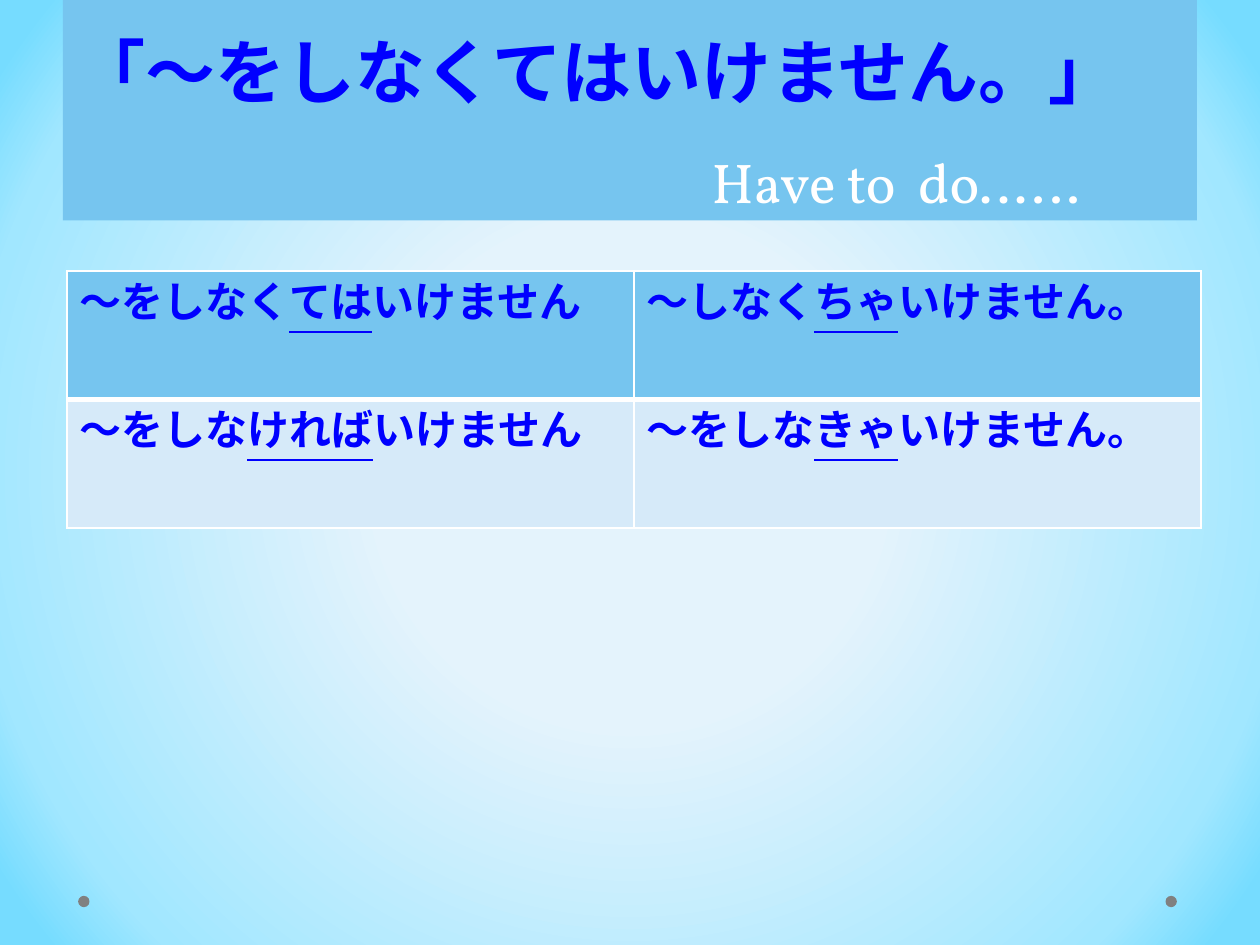
"""Build the slide on Japanese expressions of obligation."""
from lxml import etree
from pptx import Presentation
from pptx.dml.color import RGBColor
from pptx.enum import lang, shapes, text
from pptx.oxml import ns, parse_xml
from pptx.util import Inches, Pt

BLUE, SKY, PALE, WHITE, GREY = "0000FF", "76C5EF", "D6EAF9", "FFFFFF", "808080"


def paint(fill, color):
    fill.solid()
    fill.fore_color.rgb = RGBColor.from_string(color)


def style(run, size, color, bold):
    run.font.name = "Vollkorn"
    run.font.size = Pt(size)
    run.font.bold = bold
    paint(run.font.fill, color)
    run.font.language_id = lang.MSO_LANGUAGE_ID.JAPANESE
    etree.SubElement(run._r.get_or_add_rPr(), ns.qn("a:ea"), typeface="Vollkorn")


prs = Presentation()
prs.slide_width, prs.slide_height = Inches(10), Inches(7.5)
slide = prs.slides.add_slide(prs.slide_layouts[6])

stops = "".join(
    f'<a:gs pos="{percent * 1000}"><a:srgbClr val="{color}"/></a:gs>'
    for percent, color in [(32, "E4F3FC"), (84, "A1E7FF"), (95, "76DCFF")]
)
backdrop = parse_xml(
    f'<p:bg {ns.nsdecls("p", "a")}><p:bgPr><a:gradFill rotWithShape="1"><a:gsLst>{stops}</a:gsLst>'
    '<a:path path="circle"><a:fillToRect l="50000" t="50000" r="50000" b="50000"/></a:path>'
    "</a:gradFill><a:effectLst/></p:bgPr></p:bg>"
)
slide._element.cSld.insert(0, backdrop)

for left in (9.25, 0.62):
    dot = slide.shapes.add_shape(
        shapes.MSO_SHAPE.OVAL, Inches(left), Inches(7.11), Inches(0.09), Inches(0.09))
    dot.shadow.inherit = False
    paint(dot.fill, GREY)
    dot.line.fill.background()

banner = slide.shapes.add_shape(
    shapes.MSO_SHAPE.RECTANGLE, Inches(0.5), 0, Inches(9), Inches(1.75))
banner.shadow.inherit = False
paint(banner.fill, SKY)
banner.line.fill.background()
heading = banner.text_frame
heading.word_wrap = True
heading.vertical_anchor = text.MSO_ANCHOR.BOTTOM
heading.text = "「〜をしなくてはいけません。」\nHave to  do……"
looks = [(40, BLUE, True, 0), (32, WHITE, False, 5.05)]
for paragraph, (size, color, bold, indent) in zip(heading.paragraphs, looks):
    paragraph.alignment = text.PP_ALIGN.LEFT
    paragraph.line_spacing = Pt(58)
    paragraph._p.get_or_add_pPr().set("marL", str(Inches(indent)))
    style(paragraph.runs[0], size, color, bold)

phrases = [
    [("〜をしなく", "ては", "いけません"), ("〜しなく", "ちゃ", "いけません。")],
    [("〜をしな", "ければ", "いけません"), ("〜をしな", "きゃ", "いけません。")],
]
row_fills = [SKY, PALE]
row_borders = [
    {"lnL": 1, "lnR": 1, "lnT": 1, "lnB": 3},
    {"lnL": 1, "lnR": 1, "lnT": 3, "lnB": 1},
]
forms = slide.shapes.add_table(
    2, 2, Inches(0.53), Inches(2.15), Inches(9), Inches(2.04)).table
for r, row in enumerate(phrases):
    for c, parts in enumerate(row):
        cell = forms.cell(r, c)
        paragraph = cell.text_frame.paragraphs[0]
        for i, part in enumerate(parts):
            run = paragraph.add_run()
            run.text = part
            style(run, 24, BLUE, True)
            run.font.underline = i == 1
        props = cell._tc.get_or_add_tcPr()
        for side, width in row_borders[r].items():
            props.append(parse_xml(
                f'<a:{side} {ns.nsdecls("a")} w="{Pt(width)}"><a:solidFill>'
                f'<a:srgbClr val="{WHITE}"/></a:solidFill></a:{side}>'))
        paint(cell.fill, row_fills[r])

prs.save("out.pptx")
